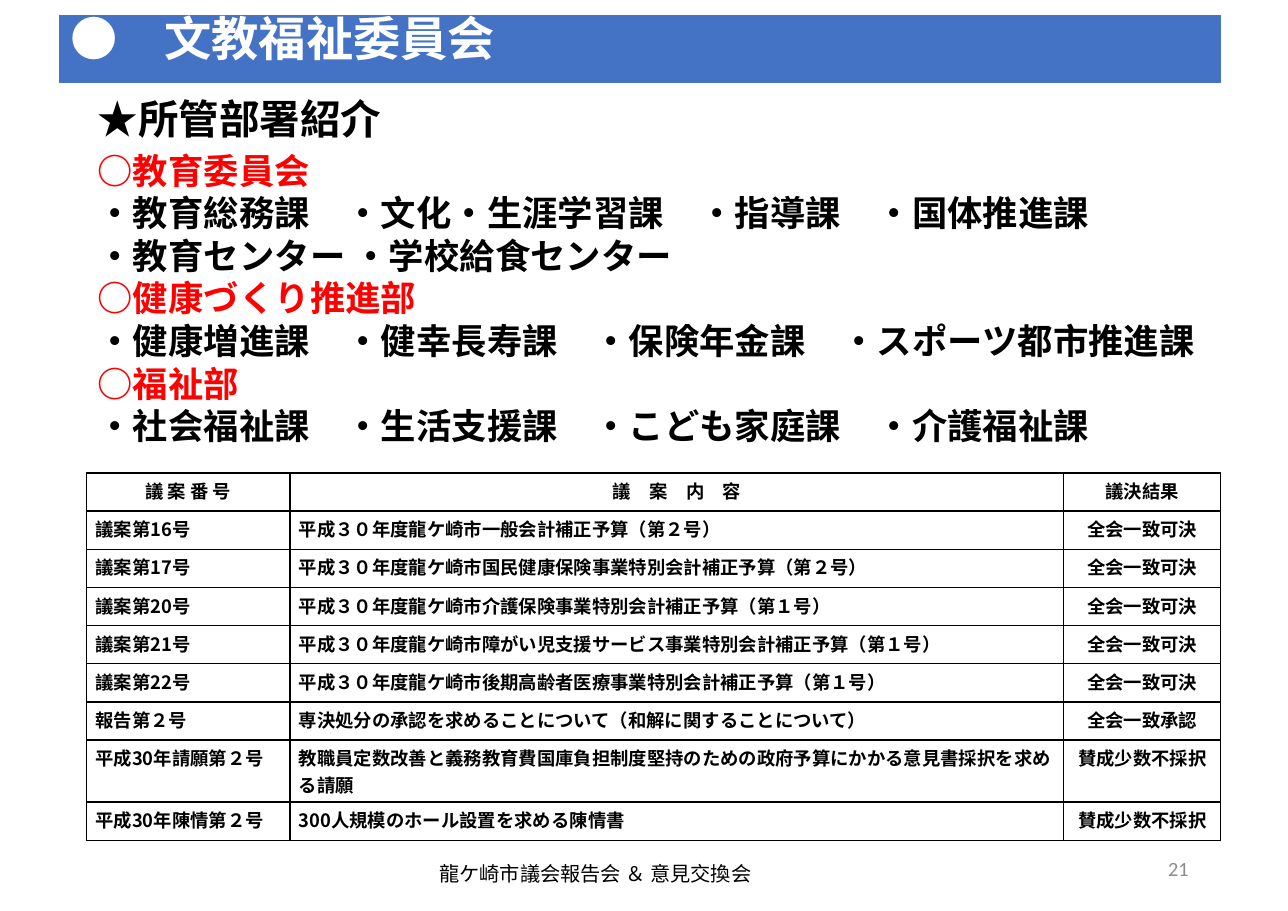
from lxml import etree
from pptx import Presentation
from pptx import util as u
from pptx.dml.color import RGBColor
from pptx.enum import shapes, text
from pptx.oxml.ns import qn

BLACK = RGBColor(0x00, 0x00, 0x00)
WHITE = RGBColor(0xFF, 0xFF, 0xFF)
RED = RGBColor(0xFF, 0x00, 0x00)
BLUE = RGBColor(0x44, 0x72, 0xC4)
GRAY = RGBColor(0x8C, 0x8C, 0x8C)
GOTHIC = "Noto Sans CJK JP"
LATIN = "Calibri"
LEFT, CENTER, RIGHT = text.PP_ALIGN.LEFT, text.PP_ALIGN.CENTER, text.PP_ALIGN.RIGHT

DEPARTMENTS = [
    ("○教育委員会", RED),
    ("・教育総務課　・文化・生涯学習課　・指導課　・国体推進課", BLACK),
    ("・教育センター ・学校給食センター", BLACK),
    ("○健康づくり推進部", RED),
    ("・健康増進課　・健幸長寿課　・保険年金課　・スポーツ都市推進課", BLACK),
    ("○福祉部", RED),
    ("・社会福祉課　・生活支援課　・こども家庭課　・介護福祉課", BLACK),
]

PASSED, APPROVED, REJECTED = "全会一致可決", "全会一致承認", "賛成少数不採択"
BILLS = [
    ("議 案 番 号", "議　案　内　容", "議決結果"),
    ("議案第16号", "平成３０年度龍ケ崎市一般会計補正予算（第２号）", PASSED),
    ("議案第17号", "平成３０年度龍ケ崎市国民健康保険事業特別会計補正予算（第２号）", PASSED),
    ("議案第20号", "平成３０年度龍ケ崎市介護保険事業特別会計補正予算（第１号）", PASSED),
    ("議案第21号", "平成３０年度龍ケ崎市障がい児支援サービス事業特別会計補正予算（第１号）", PASSED),
    ("議案第22号", "平成３０年度龍ケ崎市後期高齢者医療事業特別会計補正予算（第１号）", PASSED),
    ("報告第２号", "専決処分の承認を求めることについて（和解に関することについて）", APPROVED),
    ("平成30年請願第２号",
     "教職員定数改善と義務教育費国庫負担制度堅持のための政府予算にかかる意見書採択を求める請願", REJECTED),
    ("平成30年陳情第２号", "300人規模のホール設置を求める陳情書", REJECTED),
]
COL_WIDTHS = (4.69, 17.84, 3.62)
ROW_HEIGHT, TALL_ROW_HEIGHT, TALL_ROW = 0.88, 1.43, 7


def cm_box(*lengths):
    return [u.Cm(n) for n in lengths]


class Page:
    """Holds the slide and draws each kind of element on it."""

    def __init__(self, slide):
        self.s = slide

    def style_run(self, r, size, color, bold=False, font=GOTHIC):
        r.font.size, r.font.bold, r.font.name = u.Pt(size), bold, font
        r.font.color.rgb = color
        ea = etree.SubElement(r._r.get_or_add_rPr(), qn("a:ea"))
        ea.set("typeface", GOTHIC)

    def banner(self, box, parts, size):
        sp = self.s.shapes.add_shape(shapes.MSO_SHAPE.RECTANGLE, *cm_box(*box))
        sp.shadow.inherit = False
        sp.fill.solid()
        sp.fill.fore_color.rgb = BLUE
        sp.line.color.rgb = BLUE
        sp.line.width = u.Pt(0.75)
        tf = sp.text_frame
        tf.vertical_anchor = text.MSO_ANCHOR.TOP
        tf.margin_top = 0
        p = tf.paragraphs[0]
        p.alignment, p.line_spacing = LEFT, 0.9
        for words, bold in parts:
            r = p.add_run()
            r.text = words
            self.style_run(r, size, WHITE, bold)

    def textbox(self, box, lines, size, bold=False, font=GOTHIC, align=LEFT,
                spacing=None, wrap=True, anchor=text.MSO_ANCHOR.TOP, top=0.13):
        """Write one paragraph for each (words, color) pair in lines."""
        tf = self.s.shapes.add_textbox(*cm_box(*box)).text_frame
        tf.word_wrap, tf.vertical_anchor, tf.margin_top = wrap, anchor, u.Cm(top)
        for i, (words, color) in enumerate(lines):
            p = tf.add_paragraph() if i else tf.paragraphs[0]
            p.text, p.alignment, p.line_spacing = words, align, spacing
            self.style_run(p.runs[0], size, color, bold, font)

    def table(self, left, top, rows, size):
        heights = [TALL_ROW_HEIGHT if i == TALL_ROW else ROW_HEIGHT for i in range(len(rows))]
        box = cm_box(left, top, sum(COL_WIDTHS), sum(heights))
        t = self.s.shapes.add_table(len(rows), len(COL_WIDTHS), *box).table
        t.first_row = t.horz_banding = False
        for col, width in zip(t.columns, COL_WIDTHS):
            col.width = u.Cm(width)
        for i, (row, height) in enumerate(zip(rows, heights)):
            t.rows[i].height = u.Cm(height)
            for j, words in enumerate(row):
                align = CENTER if i == 0 or j == 2 else LEFT
                self.cell(t.cell(i, j), words, size, align)

    def cell(self, c, words, size, align):
        c.margin_left = c.margin_right = u.Cm(0.2)
        c.margin_top = c.margin_bottom = u.Cm(0.1)
        p = c.text_frame.paragraphs[0]
        p.text, p.alignment = words, align
        self.style_run(p.runs[0], size, BLACK, True)
        tc_pr = c._tc.get_or_add_tcPr()
        for side in ("lnL", "lnR", "lnT", "lnB"):
            ln = etree.SubElement(tc_pr, qn(f"a:{side}"), w=str(u.Pt(1)))
            fill = etree.SubElement(ln, qn("a:solidFill"))
            etree.SubElement(fill, qn("a:srgbClr"), val=str(BLACK))
        c.fill.solid()
        c.fill.fore_color.rgb = WHITE


def main():
    prs = Presentation()
    prs.slide_width, prs.slide_height = u.Cm(29.7), u.Cm(21)
    page = Page(prs.slides.add_slide(prs.slide_layouts[6]))
    page.table(2, 10.9, BILLS, 12)
    page.textbox((2, 2.29, 8.18, 0.86), [("★所管部署紹介", BLACK)], 26.5, bold=True,
                 font=LATIN, spacing=0.9, top=0)
    page.textbox((2, 3.3, 26.16, 7.19), DEPARTMENTS, 23.1, bold=True, spacing=u.Pt(27.8))
    page.textbox((9.88, 19.71, 7.85, 0.81), [("龍ケ崎市議会報告会 ＆ 意見交換会", BLACK)], 13.2,
                 spacing=u.Pt(16), wrap=False)
    page.banner((1.37, 0.36, 26.77, 1.55), [("●　", False), ("文教福祉委員会", True)], 30.9)
    page.textbox((20.98, 19.46, 6.68, 1.12), [("21", GRAY)], 13.2, font=LATIN, align=RIGHT,
                 anchor=text.MSO_ANCHOR.MIDDLE)
    prs.save("out.pptx")


if __name__ == "__main__":
    main()
